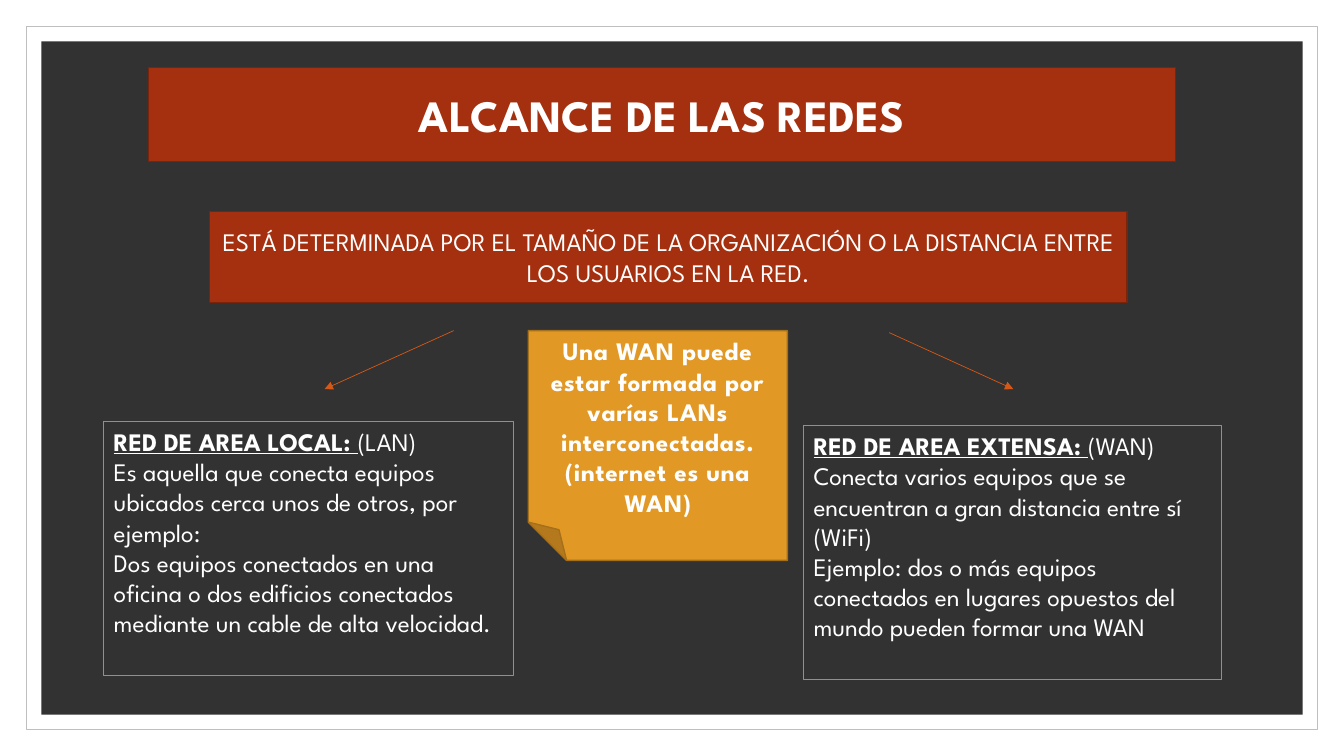
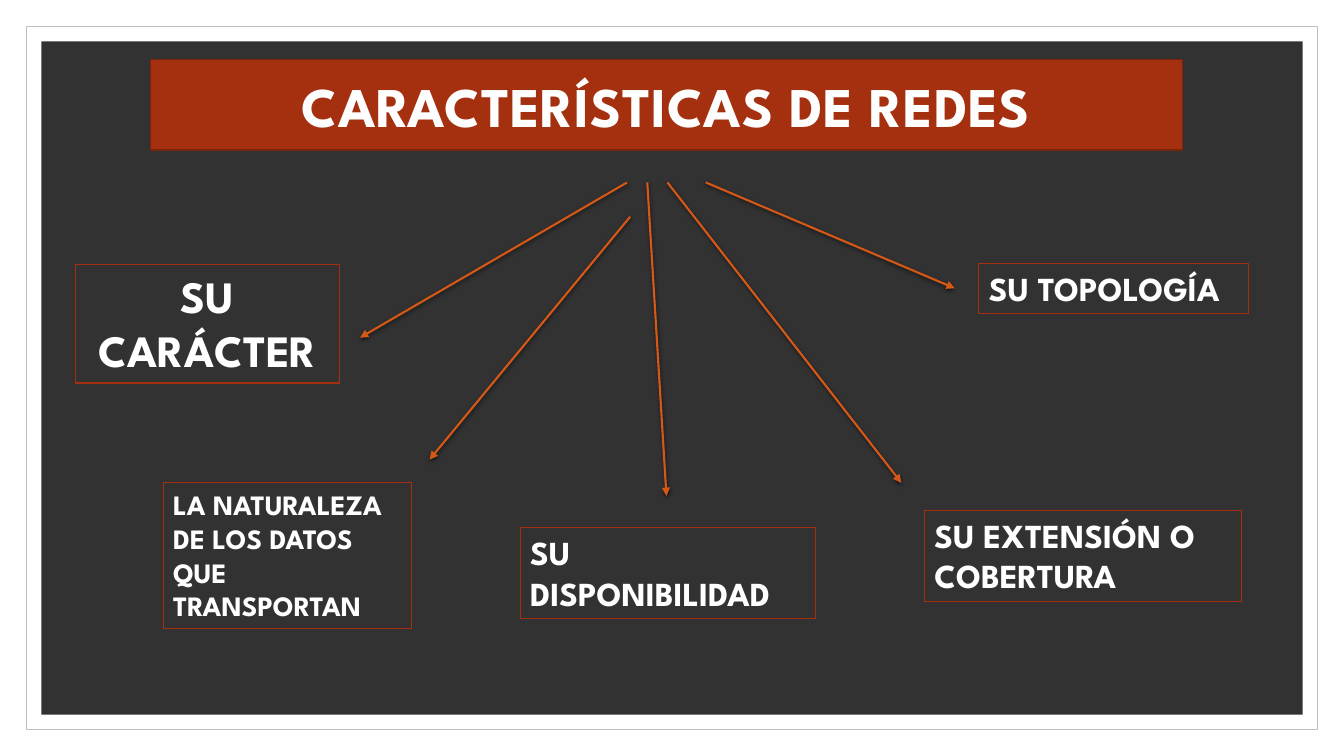
from pptx import Presentation
from pptx import util as u
from pptx.dml.color import RGBColor
from pptx.enum import shapes, text
from pptx.oxml import parse_xml
from pptx.oxml.ns import nsdecls

PX = u.Inches(0.01)
WIDTH, HEIGHT = 1333, 750
FONT = "League Spartan"
COLORS = {
    "paper": "FFFFFF", "frame": "BFBFBF", "board": "323232",
    "brick": "A5300F", "brick_edge": "7A240B", "coral": "EE6E4A",
    "note": "E19825", "note_edge": "A6701B", "arrow": "D55816",
    "text": "FFFFFF", "art_text": "FEFEFE",
}
RECT = shapes.MSO_SHAPE.RECTANGLE
CENTER = text.PP_ALIGN.CENTER
LEFT = text.PP_ALIGN.LEFT


def rgb(name):
    return RGBColor.from_string(COLORS[name])


def xml(markup):
    return parse_xml(markup.replace(">", f" {nsdecls('a')}>", 1))


def add_box(slide, box, fill=None, line=None, weight=1, kind=RECT):
    shape = slide.shapes.add_shape(kind, *(v * PX for v in box))
    shape.shadow.inherit = False
    if fill:
        shape.fill.solid()
        shape.fill.fore_color.rgb = rgb(fill)
    else:
        shape.fill.background()
    if line:
        shape.line.color.rgb = rgb(line)
        shape.line.width = u.Pt(weight)
    else:
        shape.line.fill.background()
    return shape


def add_text(paragraph, words, size=18, bold=False, underline=False, art=False):
    """Add a run; art gives it wide spacing and a brick outline."""
    run = paragraph.add_run()
    run.text = words
    font = run.font
    font.name, font.size = FONT, u.Pt(size)
    font.bold, font.underline = bold, underline
    font.color.rgb = rgb("art_text" if art else "text")
    if art:
        props = run._r.get_or_add_rPr()
        props.set("spc", "50")
        props.insert(0, xml(
            f'<a:ln w="{u.Pt(0.75)}"><a:solidFill>'
            f'<a:srgbClr val="{COLORS["brick"]}"/></a:solidFill></a:ln>'))


def fill_text(shape, paragraphs, align=CENTER, grow=False, **style):
    """Write paragraphs, each a list of (words, extra format) runs."""
    frame = shape.text_frame
    frame.word_wrap = True
    frame.vertical_anchor = text.MSO_ANCHOR.TOP if grow else text.MSO_ANCHOR.MIDDLE
    if grow:
        frame.auto_size = text.MSO_AUTO_SIZE.SHAPE_TO_FIT_TEXT
    for i, runs in enumerate(paragraphs):
        paragraph = frame.add_paragraph() if i else frame.paragraphs[0]
        paragraph.alignment = align
        for words, extra in runs:
            add_text(paragraph, words, **{**style, **extra})


def add_arrow(slide, start, end, weight, shadow=False):
    arrow = slide.shapes.add_connector(
        shapes.MSO_CONNECTOR.STRAIGHT, *(v * PX for v in (*start, *end)))
    arrow.line.color.rgb = rgb("arrow")
    arrow.line.width = u.Pt(weight)
    arrow.line._get_or_add_ln().append(xml('<a:tailEnd type="triangle"></a:tailEnd>'))
    cast = (f'<a:outerShdw blurRad="{u.Pt(3)}" dist="{u.Pt(1)}" dir="5400000">'
            '<a:srgbClr val="000000"><a:alpha val="63000"/></a:srgbClr>'
            '</a:outerShdw>') if shadow else ""
    arrow._element.spPr.append(xml(f"<a:effectLst>{cast}</a:effectLst>"))


def add_board_slide(deck):
    slide = deck.slides.add_slide(deck.slide_layouts[6])
    for inset, fill, line in ((26, "paper", "frame"), (41, "board", None)):
        add_box(slide, (inset, inset, WIDTH - 2 * inset, HEIGHT - 2 * inset),
                fill, line, 0.5)
    return slide


def add_banner(slide, box, words, **style):
    banner = add_box(slide, box, "brick", "brick_edge")
    fill_text(banner, [[(words, {})]], **style)


def add_definition(slide, box, heading, acronym, *body):
    panel = add_box(slide, box, line="coral", weight=0.75)
    title = [(heading, {"bold": True, "underline": True}), (acronym, {})]
    fill_text(panel, [title] + [[(words, {})] for words in body],
              align=LEFT, grow=True)


def add_note(slide, box, *lines):
    note = add_box(slide, box, "note", "note_edge",
                   kind=shapes.MSO_SHAPE.FOLDED_CORNER)
    note._element.spPr.xfrm.set("flipH", "1")
    fill_text(note, [[(words, {})] for words in lines], bold=True, art=True)


def add_feature(slide, box, words, size=24, align=LEFT):
    feature = add_box(slide, box, line="brick", weight=0.75)
    fill_text(feature, [[(words, {})]], align=align, grow=True, size=size, bold=True)


def build_scope(deck):
    slide = add_board_slide(deck)
    add_banner(slide, (208, 210, 910, 90),
               "ESTÁ DETERMINADA POR EL TAMAÑO DE LA ORGANIZACIÓN O LA DISTANCIA "
               "ENTRE LOS USUARIOS EN LA RED.")
    add_banner(slide, (147, 67, 1019, 93), "ALCANCE DE LAS REDES", size=32, bold=True)
    add_definition(
        slide, (103, 418, 406, 252), "RED DE AREA LOCAL: ", "(LAN)",
        "Es aquella que conecta equipos ubicados cerca unos de otros, por ejemplo:",
        "Dos equipos conectados en una oficina o dos edificios conectados "
        "mediante un cable de alta velocidad.")
    add_definition(
        slide, (797, 422, 415, 252), "RED DE AREA EXTENSA: ", "(WAN)",
        "Conecta varios equipos que se encuentran a gran distancia entre sí (WiFi)",
        "Ejemplo: dos o más equipos conectados en lugares opuestos del mundo "
        "pueden formar una WAN")
    add_note(slide, (524, 328, 257, 228),
             "Una WAN puede estar formada por varías LANs interconectadas.",
             "(internet es una WAN)")
    for start, end in (((450, 328), (322, 386)), ((882, 330), (1005, 386))):
        add_arrow(slide, start, end, 0.5)


def build_features(deck):
    slide = add_board_slide(deck)
    add_banner(slide, (149, 59, 1024, 90), "CARACTERÍSTICAS DE REDES",
               size=40, bold=True, art=True)
    add_feature(slide, (75, 262, 262, 118), "SU CARÁCTER", 32, CENTER)
    add_feature(slide, (162, 479, 246, 145),
                "LA NATURALEZA DE LOS DATOS QUE TRANSPORTAN", 20)
    add_feature(slide, (516, 523, 293, 91), "SU DISPONIBILIDAD")
    add_feature(slide, (917, 506, 314, 91), "SU EXTENSIÓN O COBERTURA")
    add_feature(slide, (971, 261, 267, 50), "SU TOPOLOGÍA")
    for start, end in (((622, 181), (357, 335)), ((625, 215), (426, 456)),
                       ((642, 181), (661, 492)), ((662, 181), (894, 479)),
                       ((700, 181), (947, 286))):
        add_arrow(slide, start, end, 1.5, shadow=True)


def main():
    deck = Presentation()
    deck.slide_width, deck.slide_height = WIDTH * PX, HEIGHT * PX
    build_scope(deck)
    build_features(deck)
    deck.save("out.pptx")


if __name__ == "__main__":
    main()
